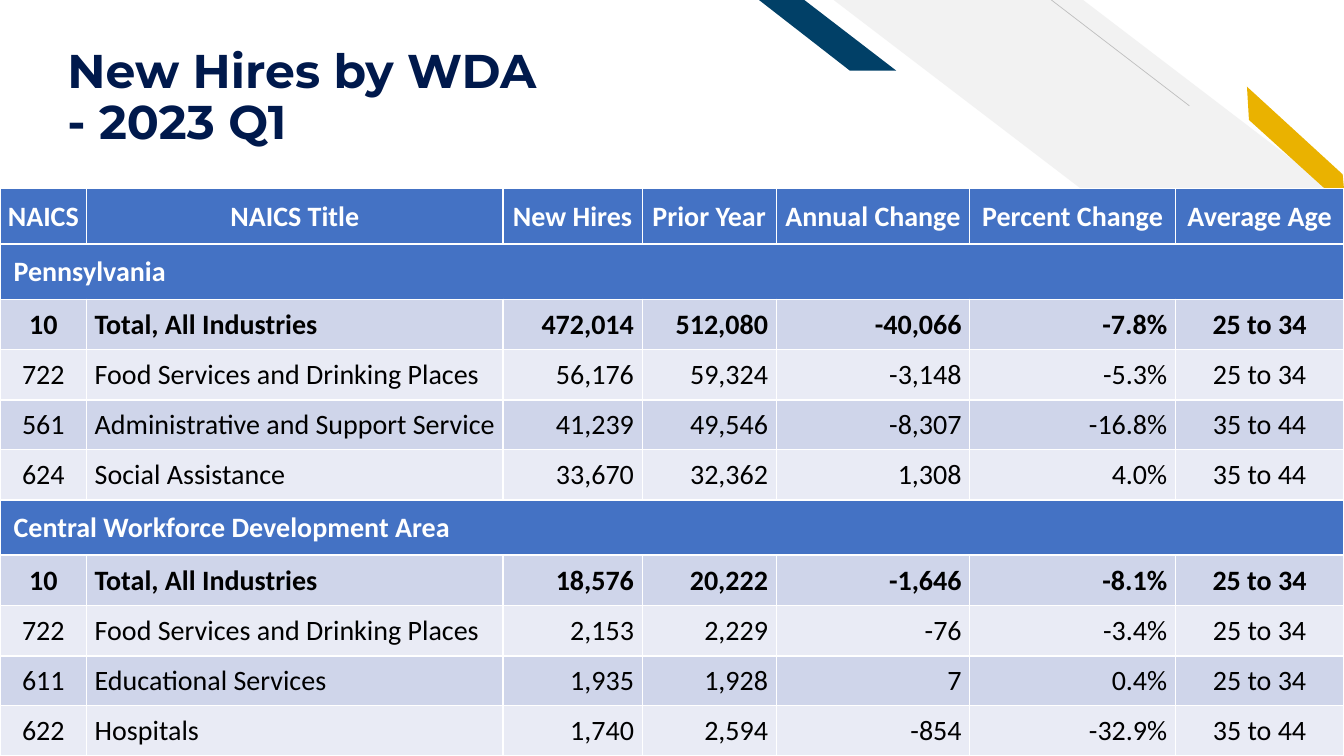
from dataclasses import dataclass

from lxml import etree
from pptx import Presentation
from pptx.dml.color import RGBColor
from pptx.enum.shapes import MSO_CONNECTOR, MSO_SHAPE
from pptx.enum.text import MSO_ANCHOR, PP_ALIGN
from pptx.oxml.ns import qn
from pptx.util import Inches, Pt

LEFT, MID, RIGHT = PP_ALIGN.LEFT, PP_ALIGN.CENTER, PP_ALIGN.RIGHT
MIDDLE, BOTTOM = MSO_ANCHOR.MIDDLE, MSO_ANCHOR.BOTTOM
STRIPE, LINE = MSO_SHAPE.DIAGONAL_STRIPE, MSO_CONNECTOR.STRAIGHT
WIDE, HIGH = Inches(13.333), Inches(7.5)


@dataclass(frozen=True)
class Theme:
    ink: str = "00194C"
    blue: str = "4472C4"
    dark: str = "CFD5EA"
    light: str = "E9EBF5"
    white: str = "FFFFFF"
    black: str = "000000"
    grey: str = "F2F2F2"
    rule: str = "BFBFBF"
    gold: str = "EAB200"
    navy: str = "014067"
    head: str = "Montserrat"
    body: str = "Calibri"
    head_size: float = 33.8
    body_size: float = 20
    thin: float = 1
    thick: float = 1.5


@dataclass(frozen=True)
class Trade:
    code: str
    title: str
    hires: int
    prior: int
    age: str

    def texts(self) -> list[str]:
        change = self.hires - self.prior
        return [self.code, self.title, f"{self.hires:,}", f"{self.prior:,}",
                f"{change:,}", f"{change / self.prior:.1%}", self.age]


@dataclass(frozen=True)
class Region:
    name: str
    trades: list[Trade]


@dataclass(frozen=True)
class Column:
    head: str
    share: float
    align: PP_ALIGN


@dataclass(frozen=True)
class Look:
    fill: str
    color: str
    bold: bool
    top: float
    base: float


THEME = Theme()
COLUMNS = [
    Column("NAICS", 6.45, MID),
    Column("NAICS Title", 30.98, LEFT),
    Column("New Hires", 10.35, RIGHT),
    Column("Prior Year", 9.98, RIGHT),
    Column("Annual Change", 14.4, RIGHT),
    Column("Percent Change", 15.3, RIGHT),
    Column("Average Age", 12.54, MID),
]
REGIONS = [
    Region("Pennsylvania", [
        Trade("10", "Total, All Industries", 472014, 512080, "25 to 34"),
        Trade("722", "Food Services and Drinking Places", 56176, 59324, "25 to 34"),
        Trade("561", "Administrative and Support Service", 41239, 49546, "35 to 44"),
        Trade("624", "Social Assistance", 33670, 32362, "35 to 44"),
    ]),
    Region("Central Workforce Development Area", [
        Trade("10", "Total, All Industries", 18576, 20222, "25 to 34"),
        Trade("722", "Food Services and Drinking Places", 2153, 2229, "25 to 34"),
        Trade("611", "Educational Services", 1935, 1928, "25 to 34"),
        Trade("622", "Hospitals", 1740, 2594, "35 to 44"),
    ]),
]
TABLE_TOP, BAND, ROW = 24.93, 7.34, 6.63
PAD, INSET, INDENT = 0.07, 0.6, 1.01
GOLD_BAR = [(100.13, 27.47), (99.9, 23.07), (92.78, 11.47), (92.93, 15.87)]
NAVY_BAR = [(66.68, 9.33), (59.85, 0), (56.48, 0), (63.23, 9.33)]


def across(share: float) -> int:
    """Percent of the slide's width."""
    return round(WIDE * share / 100)


def down(share: float) -> int:
    """Percent of the slide's height."""
    return round(HIGH * share / 100)


def paint(shape, color: str) -> None:
    shape.shadow.inherit = False
    shape.fill.solid()
    shape.fill.fore_color.rgb = RGBColor.from_string(color)
    shape.line.fill.background()


def style(para, font: str, size: float, color: str, bold: bool) -> None:
    for run in para.runs:
        run.font.name, run.font.size, run.font.bold = font, Pt(size), bold
        run.font.color.rgb = RGBColor.from_string(color)


def draw_bar(slide, points: list[tuple[float, float]], color: str) -> None:
    spots = [(across(x), down(y)) for x, y in points]
    form = slide.shapes.build_freeform(*spots[0])
    form.add_line_segments(spots[1:], close=True)
    paint(form.convert_to_shape(), color)


def draw_decor(slide) -> None:
    stripe = slide.shapes.add_shape(STRIPE, across(62.03), 0, across(38.03), down(51.6))
    stripe.adjustments[0] = 0.512
    stripe.element.spPr.xfrm.set("flipH", "1")
    paint(stripe, THEME.grey)
    rule = slide.shapes.add_connector(LINE, across(88.5), down(14), across(78.23), 0)
    rule.line.color.rgb = RGBColor.from_string(THEME.rule)
    rule.line.width = Pt(0.5)
    etree.SubElement(rule.element.spPr, qn("a:effectLst"))
    draw_bar(slide, GOLD_BAR, THEME.gold)
    draw_bar(slide, NAVY_BAR, THEME.navy)


def draw_title(slide) -> None:
    box = slide.shapes.add_textbox(across(4.28), down(3.07), across(68.33), down(16.8))
    frame = box.text_frame
    frame.word_wrap = True
    frame.vertical_anchor = BOTTOM
    frame.margin_bottom = 0
    para = frame.paragraphs[0]
    para.text = "New Hires by WDA\n- 2023 Q1"
    para.line_spacing = 0.9
    style(para, THEME.head, THEME.head_size, THEME.ink, True)


def edge(cell, top: float, base: float) -> None:
    """Give a cell white borders; they must come before its fill."""
    props = cell._tc.get_or_add_tcPr()
    sides = {"lnL": THEME.thin, "lnR": THEME.thin, "lnT": top, "lnB": base}
    for side, width in sides.items():
        line = etree.SubElement(props, qn(f"a:{side}"), w=str(Pt(width)))
        fill = etree.SubElement(line, qn("a:solidFill"))
        etree.SubElement(fill, qn("a:srgbClr"), val=THEME.white)


def fill_cell(cell, text: str, align: PP_ALIGN, look: Look, left: float, right: float) -> None:
    edge(cell, look.top, look.base)
    cell.fill.solid()
    cell.fill.fore_color.rgb = RGBColor.from_string(look.fill)
    cell.vertical_anchor = MIDDLE
    cell.margin_left, cell.margin_right = across(left), across(right)
    cell.margin_top, cell.margin_bottom = down(0.13), 0
    para = cell.text_frame.paragraphs[0]
    para.text = text
    para.alignment = align
    style(para, THEME.body, THEME.body_size, look.color, look.bold)


def draw_table(slide) -> None:
    count = 1 + sum(1 + len(region.trades) for region in REGIONS)
    frame = slide.shapes.add_table(count, len(COLUMNS), 0, down(TABLE_TOP), WIDE,
                                   down(100 - TABLE_TOP))
    table = frame.table
    table.first_row = table.horz_banding = False
    for slot, column in zip(table.columns, COLUMNS):
        slot.width = across(column.share)
    rows = iter(table.rows)

    def next_row(share: float):
        row = next(rows)
        row.height = down(share)
        return row.cells

    thin, thick = THEME.thin, THEME.thick
    look = Look(THEME.blue, THEME.white, True, thick, thin)
    for cell, column in zip(next_row(BAND), COLUMNS):
        fill_cell(cell, column.head, MID, look, PAD, PAD)
    for region in REGIONS:
        band = list(next_row(BAND))
        look = Look(THEME.blue, THEME.white, True, thin, thick)
        for cell in band:
            fill_cell(cell, region.name if cell is band[0] else "", LEFT, look, INDENT, PAD)
        band[0].merge(band[-1])
        for i, trade in enumerate(region.trades):
            odd = i % 2 == 1
            look = Look(THEME.light if odd else THEME.dark, THEME.black, i == 0,
                        thin if odd else thick, thick if i == 1 else thin)
            for cell, column, text in zip(next_row(ROW), COLUMNS, trade.texts()):
                fill_cell(cell, text, column.align, look,
                          INSET if column.align == LEFT else PAD,
                          INSET if column.align == RIGHT else PAD)


def main() -> None:
    deck = Presentation()
    deck.slide_width, deck.slide_height = WIDE, HIGH
    slide = deck.slides.add_slide(deck.slide_layouts[6])
    draw_decor(slide)
    draw_title(slide)
    draw_table(slide)
    deck.save("out.pptx")


if __name__ == "__main__":
    main()
